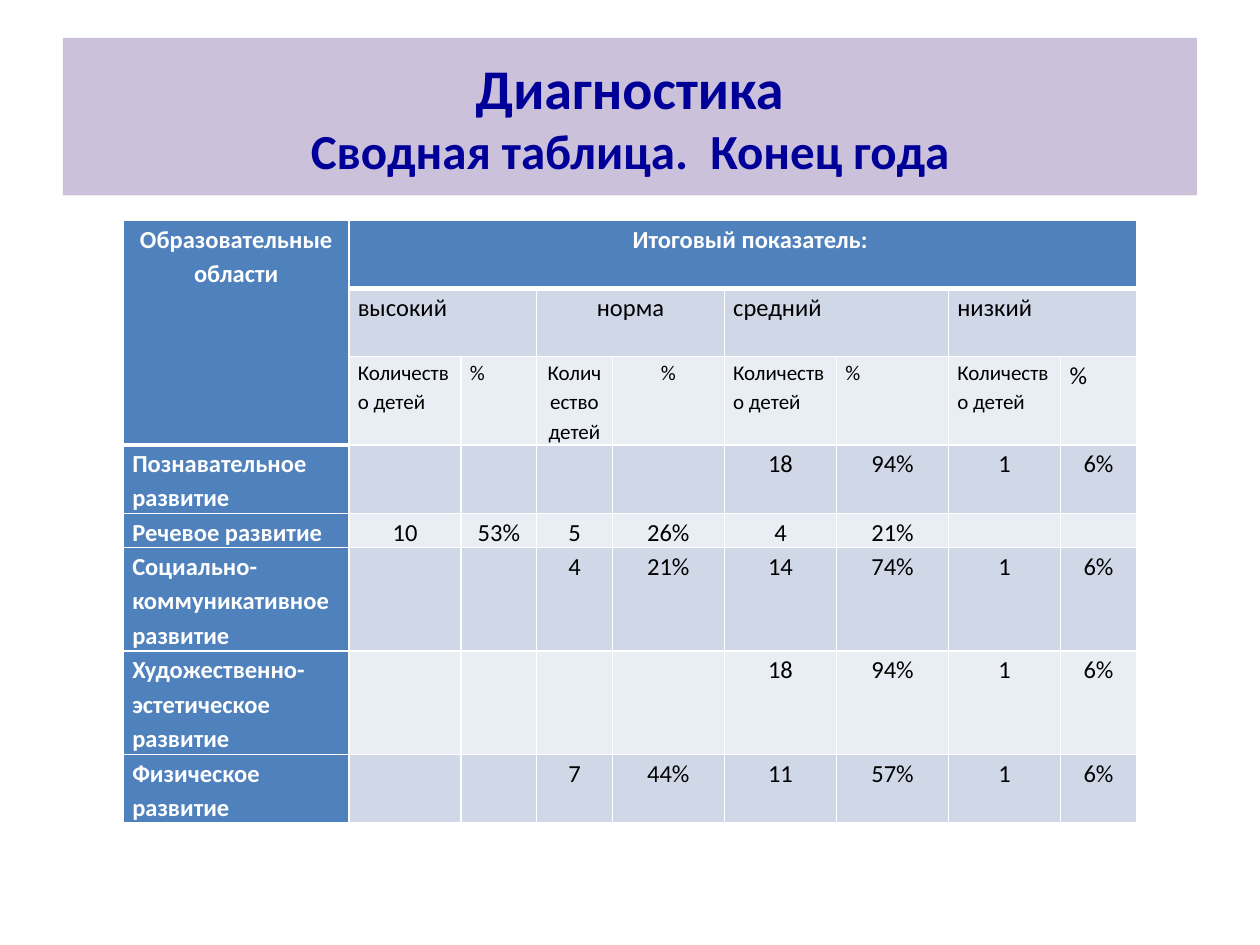
from dataclasses import dataclass
from lxml import etree
from pptx import Presentation
from pptx.dml.color import RGBColor
from pptx.enum import shapes, text
from pptx.oxml.ns import qn
from pptx.util import Inches, Pt


@dataclass(frozen=True)
class Theme:
    font: str = "Calibri"
    banner: str = "CCC1DA"
    title: str = "000099"
    header: str = "4F81BD"
    dark_band: str = "D0D8E8"
    light_band: str = "E9EDF4"
    white: str = "FFFFFF"
    black: str = "000000"
    title_size: int = 32
    subtitle_size: int = 28
    body_size: int = 14
    small_size: int = 12


theme = Theme()


def style_run(run, size, color, bold):
    run.font.name = theme.font
    run.font.size = Pt(size)
    run.font.bold = bold
    run.font.color.rgb = RGBColor.from_string(color)


def add_borders(cell, widths):
    properties = cell._tc.get_or_add_tcPr()
    for position, (side, width) in enumerate(zip("LRTB", widths)):
        line = etree.Element(qn(f"a:ln{side}"), w=str(Pt(width)))
        fill = etree.SubElement(line, qn("a:solidFill"))
        etree.SubElement(fill, qn("a:srgbClr"), val=theme.white)
        properties.insert(position, line)


prs = Presentation()
prs.slide_width, prs.slide_height = Inches(10), Inches(7.5)
slide = prs.slides.add_slide(prs.slide_layouts[6])

banner = slide.shapes.add_shape(
    shapes.MSO_SHAPE.RECTANGLE, Inches(0.5), Inches(0.3), Inches(9), Inches(1.25))
banner.shadow.inherit = False
banner.fill.solid()
banner.fill.fore_color.rgb = RGBColor.from_string(theme.banner)
banner.line.fill.background()
banner.text_frame.text = "Диагностика\vСводная таблица.  Конец года"
banner.text_frame.vertical_anchor = text.MSO_ANCHOR.MIDDLE
heading = banner.text_frame.paragraphs[0]
heading.alignment = text.PP_ALIGN.CENTER
for run, size in zip(heading.runs, (theme.title_size, theme.subtitle_size)):
    style_run(run, size, theme.title, True)

count = "Количество детей"
rows = [
    ["Образовательные области", "Итоговый показатель:"] + [""] * 7,
    ["", "высокий", "", "норма", "", "средний", "", "низкий", ""],
    [""] + [count, "%"] * 4,
    ["Познавательное развитие", "", "", "", "", "18", "94%", "1", "6%"],
    ["Речевое развитие", "10", "53%", "5", "26%", "4", "21%", "", ""],
    ["Социально-коммуникативное развитие", "", "", "4", "21%", "14", "74%", "1", "6%"],
    ["Художественно-эстетическое развитие", "", "", "", "", "18", "94%", "1", "6%"],
    ["Физическое развитие", "", "", "7", "44%", "11", "57%", "1", "6%"],
]
column_widths = [1.79, 0.89, 0.6, 0.6, 0.89, 0.89, 0.89, 0.89, 0.6]
row_heights = [0.54, 0.54, 0.7, 0.54, 0.27, 0.82, 0.82, 0.54]
norm_columns = (3, 4)
last_row, last_column = len(rows) - 1, len(column_widths) - 1

summary = slide.shapes.add_table(
    len(rows), len(column_widths), Inches(0.98), Inches(1.75),
    Inches(sum(column_widths)), Inches(sum(row_heights))).table
for column, width in zip(summary.columns, column_widths):
    column.width = Inches(width)
for row, height in zip(summary.rows, row_heights):
    row.height = Inches(height)

for r, values in enumerate(rows):
    for c, value in enumerate(values):
        cell = summary.cell(r, c)
        is_header = r == 0 or c == 0
        band = theme.dark_band if r % 2 else theme.light_band
        cell.fill.solid()
        cell.fill.fore_color.rgb = RGBColor.from_string(theme.header if is_header else band)
        cell.margin_left = cell.margin_right = Inches(0.07)
        cell.margin_top = cell.margin_bottom = 0
        thick_top = r == (1 if c else 3)
        thick_bottom = r == (0 if c else 2)
        add_borders(cell, (1, 1, 3 if thick_top else 1, 3 if thick_bottom else 1))

        cell.text_frame.text = value
        paragraph = cell.text_frame.paragraphs[0]
        paragraph.line_spacing = 1.15
        centered = r == 0 or (r > 2 and c > 0) or (r > 0 and c in norm_columns)
        paragraph.alignment = text.PP_ALIGN.CENTER if centered else text.PP_ALIGN.LEFT
        size = theme.small_size if r == 2 and c < last_column else theme.body_size
        for run in paragraph.runs:
            style_run(run, size, theme.white if is_header else theme.black, is_header)
        if not value:
            etree.SubElement(paragraph._p, qn("a:endParaRPr"), sz=str(theme.small_size * 100))

indicator = summary.cell(0, 1).text_frame.paragraphs[0]
indicator._p.get_or_add_pPr().set("indent", str(Inches(0.12)))

summary.cell(0, 0).merge(summary.cell(2, 0))
summary.cell(0, 1).merge(summary.cell(0, last_column))
for c in range(1, last_column, 2):
    summary.cell(1, c).merge(summary.cell(1, c + 1))

prs.save("out.pptx")
